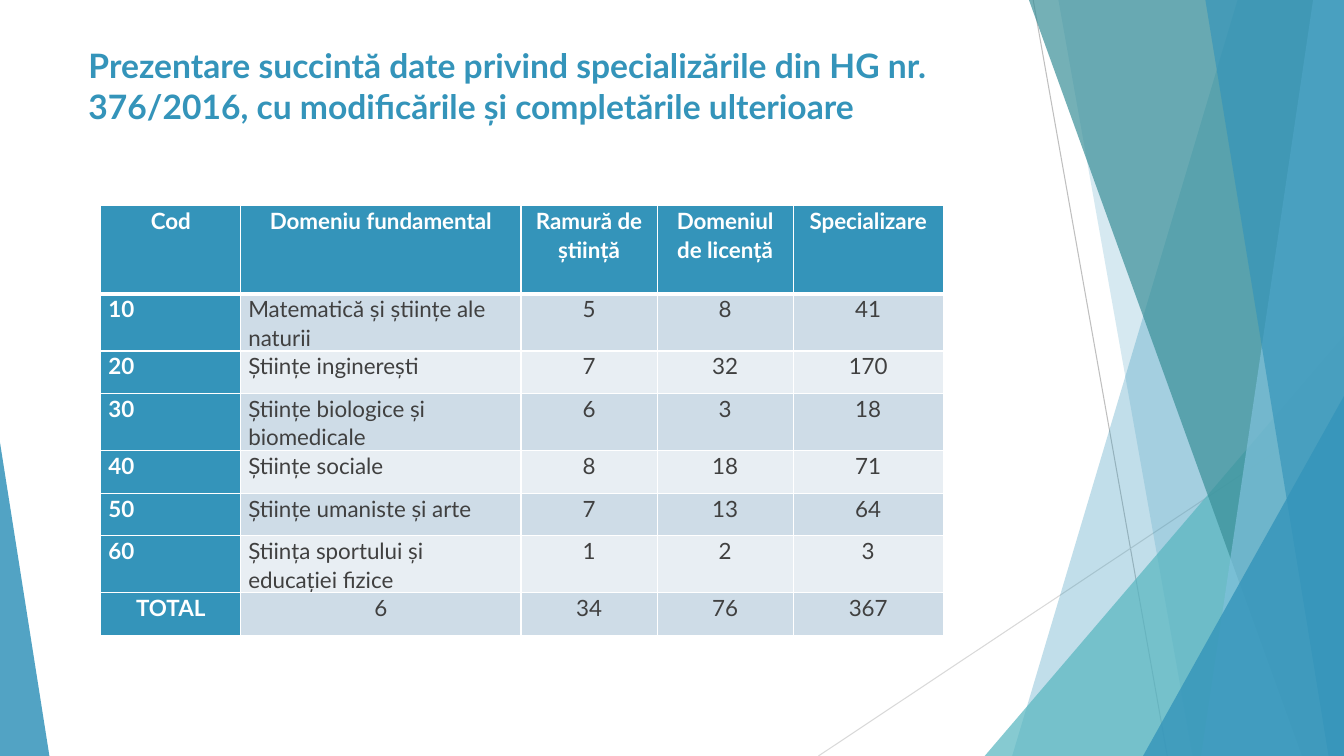
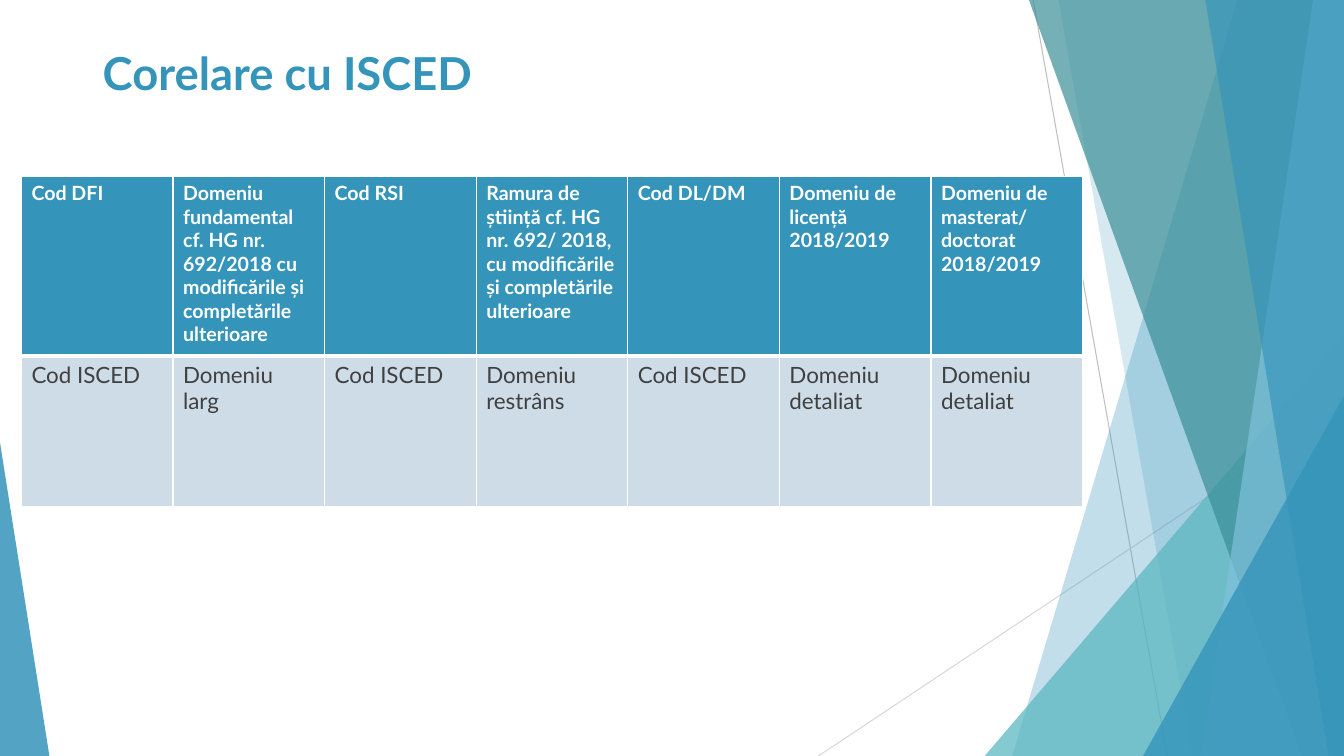
import lxml.etree
import pptx
import pptx.dml.color
import pptx.enum.shapes
import pptx.enum.text
import pptx.oxml.ns
import pptx.util

Pt = pptx.util.Pt
qn = pptx.oxml.ns.qn
ALIGN = pptx.enum.text.PP_ALIGN
FONT = "Lato"
WIDTH, HEIGHT = 960, 540
COLORS = {
    "blue": "3494BA",
    "turquoise": "58B6C0",
    "teal": "3A8F98",
    "sky": "7FC1DB",
    "gray": "BFBFBF",
    "silver": "D9D9D9",
    "white": "FFFFFF",
    "text": "404040",
    "band": "CEDCE7",
    "pale": "E8EEF3",
}


def format_text(paragraph, size, color, bold):
    for run in paragraph.runs:
        run.font.name = FONT
        run.font.size = Pt(size)
        run.font.bold = bold
        run.font.color.rgb = pptx.dml.color.RGBColor.from_string(COLORS[color])


def add_grid(slide, rows, left, top, widths, heights, header_size, code_column):
    frame = slide.shapes.add_table(
        len(rows), len(widths), Pt(left), Pt(top), Pt(sum(widths)), Pt(sum(heights))
    )
    table = frame.table
    table.horz_banding = False
    table.first_col = code_column
    for column, width in zip(table.columns, widths):
        column.width = Pt(width)
    for row_index, values in enumerate(rows):
        table.rows[row_index].height = Pt(heights[row_index])
        for column_index, value in enumerate(values):
            cell = table.cell(row_index, column_index)
            strong = row_index == 0 or (code_column and column_index == 0)
            fill = "blue" if strong else "band" if row_index % 2 else "pale"
            cell.fill.solid()
            cell.fill.fore_color.rgb = pptx.dml.color.RGBColor.from_string(COLORS[fill])
            cell.text_frame.text = value
            size = header_size if row_index == 0 else 16
            format_text(cell.text_frame.paragraphs[0], size, "white" if strong else "text", strong)
            properties = cell._tc.get_or_add_tcPr()
            thick_side = {0: "lnB", 1: "lnT"}.get(row_index)
            for position, side in enumerate(("lnL", "lnR", "lnT", "lnB")):
                border = lxml.etree.Element(qn("a:" + side), w=str(Pt(3 if side == thick_side else 1)))
                border_fill = lxml.etree.SubElement(border, qn("a:solidFill"))
                lxml.etree.SubElement(border_fill, qn("a:srgbClr"), val=COLORS["white"])
                properties.insert(position, border)
    return table


presentation = pptx.Presentation()
presentation.slide_width = Pt(WIDTH)
presentation.slide_height = Pt(HEIGHT)
layout = presentation.slide_layouts[5]
layout_title = None
for placeholder in list(layout.placeholders):
    if placeholder.placeholder_format.type == pptx.enum.shapes.PP_PLACEHOLDER.TITLE:
        layout_title = placeholder
    else:
        placeholder.element.getparent().remove(placeholder.element)

titles = [
    (
        "Prezentare succintă date privind specializările din HG nr. 376/2016, "
        "cu modificările și completările ulterioare",
        (56, 28.8, 680.4, 75),
        24,
    ),
    ("Corelare cu ISCED", (66.2, 28.8, 656.6, 42), 32.4),
]
slides = []
for text, box, size in titles:
    slide = presentation.slides.add_slide(layout)
    slides.append(slide)
    title = slide.shapes.title
    title.left, title.top, title.width, title.height = map(Pt, box)
    title.text_frame.text = text
    title.text_frame.word_wrap = True
    title.text_frame.auto_size = pptx.enum.text.MSO_AUTO_SIZE.NONE
    title.text_frame.vertical_anchor = pptx.enum.text.MSO_ANCHOR.TOP
    title.text_frame.paragraphs[0].alignment = ALIGN.LEFT
    format_text(title.text_frame.paragraphs[0], size, "blue", True)
overview, correlation = slides

thin_lines = [
    ((738, 0, 833.8, HEIGHT), "gray"),
    ((WIDTH, 290.2, 584.6, HEIGHT), "silver"),
]
for ends, color in thin_lines:
    connector = overview.shapes.add_connector(pptx.enum.shapes.MSO_CONNECTOR.STRAIGHT, *map(Pt, ends))
    connector.line.color.rgb = pptx.dml.color.RGBColor.from_string(COLORS[color])
    connector.line.width = Pt(0.75)
    lxml.etree.SubElement(connector.element.spPr, qn("a:effectLst"))
    layout_title.element.addprevious(connector.element)

facets = [
    ("panel", (884.2, 722.9), "blue", 30),
    ("panel", (756, 851.8), "blue", 20),
    ("triangle", (703.4, 239.8, 256.6, 1), "turquoise", 72),
    ("panel", (735.1, 929.5), "teal", 70),
    ("panel", (938.2, 858.2), "sky", 70),
    ("panel", (861.1, 949), "blue", 65),
    ("triangle", (816.5, 283, 143.5, 1), "blue", 80),
    ("triangle", (0, 316.1, 35.3, 0), "blue", 85),
]
for kind, geometry, color, opacity in facets:
    if kind == "panel":
        top_x, bottom_x = geometry
        builder = overview.shapes.build_freeform(top_x, 0, scale=Pt(1))
        builder.add_line_segments([(WIDTH, 0), (WIDTH, HEIGHT), (bottom_x, HEIGHT)], close=True)
        shape = builder.convert_to_shape()
    else:
        left, top, width, apex = geometry
        shape = overview.shapes.add_shape(
            pptx.enum.shapes.MSO_SHAPE.ISOSCELES_TRIANGLE, Pt(left), Pt(top), Pt(width), Pt(HEIGHT - top)
        )
        shape.adjustments[0] = apex
    shape.shadow.inherit = False
    shape.line.fill.background()
    shape.fill.solid()
    shape.fill.fore_color.rgb = pptx.dml.color.RGBColor.from_string(COLORS[color])
    fill_color = shape.element.spPr.find(qn("a:solidFill")).find(qn("a:srgbClr"))
    lxml.etree.SubElement(fill_color, qn("a:alpha"), val=str(opacity * 1000))
    layout_title.element.addprevious(shape.element)

domains = [
    ("Cod", "Domeniu fundamental", "Ramură de știință", "Domeniul de licență", "Specializare"),
    ("10", "Matematică și științe ale naturii", "5", "8", "41"),
    ("20", "Științe inginerești", "7", "32", "170"),
    ("30", "Științe biologice și biomedicale", "6", "3", "18"),
    ("40", "Științe sociale", "8", "18", "71"),
    ("50", "Științe umaniste și arte", "7", "13", "64"),
    ("60", "Știința sportului și educației fizice", "1", "2", "3"),
    ("TOTAL", "6", "34", "76", "367"),
]
domain_table = add_grid(
    overview, domains, 72, 146.9, [100, 200.2, 97.2, 97.2, 107.2], [63] + [30.3] * 7, 16, True
)
for row_index, row in enumerate(domain_table.rows):
    for column_index, cell in enumerate(row.cells):
        cell.margin_left = cell.margin_right = Pt(5.4)
        cell.margin_top = cell.margin_bottom = 0
        paragraph = cell.text_frame.paragraphs[0]
        is_label = column_index < 2 and 0 < row_index < len(domains) - 1
        paragraph.alignment = ALIGN.LEFT if is_label else ALIGN.CENTER
        paragraph.line_spacing = 1.07
        paragraph.space_before = paragraph.space_after = Pt(6)

correspondences = [
    (
        "Cod DFI",
        "Domeniu fundamental cf. HG nr. 692/2018 cu modificările și completările ulterioare",
        "Cod RSI",
        "Ramura de știință cf. HG nr. 692/ 2018, cu modificările și completările ulterioare",
        "Cod DL/DM",
        "Domeniu de licență 2018/2019",
        "Domeniu de masterat/ doctorat 2018/2019",
    ),
    (
        "Cod ISCED",
        "Domeniu larg",
        "Cod ISCED",
        "Domeniu restrâns",
        "Cod ISCED",
        "Domeniu detaliat",
        "Domeniu detaliat",
    ),
]
add_grid(correlation, correspondences, 15.3, 126, [108.3] * 7, [128.4, 107.4], 14, False)

presentation.save("out.pptx")
